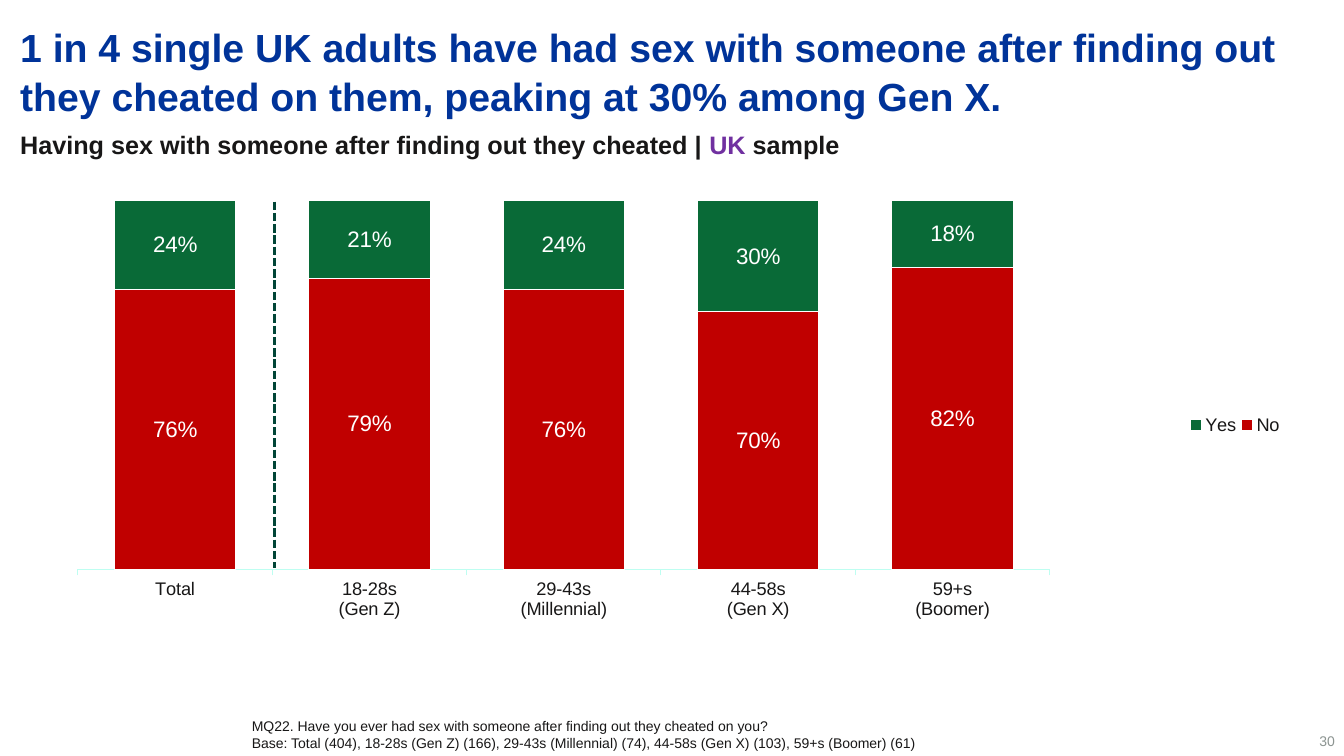
"""Build the slide on single UK adults and cheating, with a stacked chart by age group."""
import pptx
import pptx.chart.data
import pptx.dml.color
import pptx.enum.chart
import pptx.enum.dml
import pptx.enum.shapes
import pptx.enum.text
import pptx.oxml
import pptx.oxml.ns
import pptx.util
from pptx.util import Inches, Pt

TITLE = ("1 in 4 single UK adults have had sex with someone after finding out "
         "they cheated on them, peaking at 30% among Gen X.")
HEAD = [("Having sex with someone after finding out they cheated | ", "181717"),
        ("UK", "7030A0"), (" sample", "181717")]
NOTES = ["MQ22. Have you ever had sex with someone after finding out they cheated on you?",
         "Base: Total (404), 18-28s (Gen Z) (166), 29-43s (Millennial) (74), "
         "44-58s (Gen X) (103), 59+s (Boomer) (61)"]
PAGE = "30"
GROUPS = ["Total", "18-28s\n(Gen Z)", "29-43s\n(Millennial)", "44-58s\n(Gen X)", "59+s\n(Boomer)"]
SERIES = [("No", "C00000", [0.76, 0.79, 0.76, 0.7, 0.82]),
          ("Yes", "096A37", [0.24, 0.21, 0.24, 0.3, 0.18])]
INK, BLUE, GREEN, GREY, WHITE, MINT = "181717", "003399", "014537", "8C9491", "FFFFFF", "BEFEF1"
PLOT = (0.03, 0.08, 0.78, 0.7)
PLOT = (0.026, 0.075, 0.776, 0.698)
KEY = (0.91, 0.47, 0.08, 0.06)
ALIGN = pptx.enum.text.PP_ALIGN
ANCHOR = pptx.enum.text.MSO_ANCHOR


def paint(part, color):
    """Set the colour of a font or a fill."""
    if hasattr(part, "solid"):
        part.solid()
        part.fore_color.rgb = pptx.dml.color.RGBColor.from_string(color)
    else:
        part.color.rgb = pptx.dml.color.RGBColor.from_string(color)


def style(font, size, color, bold=False):
    """Set face, size, colour and weight of a font."""
    font.name, font.size, font.bold = "Arial", Pt(size), bold
    paint(font, color)


def frame(shape, pad=0.0, anchor=ANCHOR.TOP):
    """Set margins, wrap and anchor of a shape's text."""
    text = shape.text_frame
    text.word_wrap, text.vertical_anchor = True, anchor
    text.auto_size = pptx.enum.text.MSO_AUTO_SIZE.NONE
    text.margin_left = text.margin_right = Inches(2 * pad)
    text.margin_top = text.margin_bottom = Inches(pad)
    return text


def box(slide, x, y, w, h, pad=0.0, anchor=ANCHOR.TOP):
    """Add a text box and return its text frame."""
    return frame(slide.shapes.add_textbox(Inches(x), Inches(y), Inches(w), Inches(h)), pad, anchor)


def place(node, spot, index, inner=False):
    """Give a chart part a fixed layout."""
    for old in node.findall(pptx.oxml.ns.qn("c:layout")):
        node.remove(old)
    target = '<c:layoutTarget val="inner"/>' if inner else ""
    modes = "".join(f'<c:{k}Mode val="edge"/>' for k in "xy")
    sizes = "".join(f'<c:{k} val="{v}"/>' for k, v in zip("xywh", spot))
    node.insert(index, pptx.oxml.parse_xml(
        f'<c:layout {pptx.oxml.ns.nsdecls("c")}><c:manualLayout>{target}{modes}{sizes}'
        "</c:manualLayout></c:layout>"))


def draw_chart(slide):
    """Add the stacked chart."""
    data = pptx.chart.data.CategoryChartData(number_format="0%")
    data.categories = GROUPS
    for name, _, values in SERIES:
        data.add_series(name, values)
    enum = pptx.enum.chart
    chart = slide.shapes.add_chart(
        enum.XL_CHART_TYPE.COLUMN_STACKED_100, Inches(0.45), Inches(1.6),
        Inches(12.42), Inches(5.24), data).chart
    style(chart.font, 10, GREEN)
    chart.has_title = False
    plot = chart.plots[0]
    plot.gap_width, plot.overlap, plot.vary_by_categories = 60, 100, False
    for bars, (_, color, _) in zip(plot.series, SERIES):
        paint(bars.format.fill, color)
        line = bars.format.line
        line.width = Pt(0.75)
        paint(line, WHITE)
        labels = bars.data_labels
        labels.show_value = True
        labels.number_format, labels.number_format_is_linked = "0%", False
        labels.position = enum.XL_LABEL_POSITION.CENTER
        style(labels.font, 16, WHITE)
    axis = chart.category_axis
    axis.major_tick_mark = enum.XL_TICK_MARK.OUTSIDE
    style(axis.tick_labels.font, 13, INK)
    axis.format.line.width = Pt(0.75)
    paint(axis.format.line, MINT)
    scale = chart.value_axis
    scale.minimum_scale, scale.maximum_scale, scale.major_unit = 0, 1, 0.2
    scale.has_major_gridlines = scale.visible = False
    chart.has_legend = True
    legend = chart.legend
    legend.position = enum.XL_LEGEND_POSITION.RIGHT
    legend.include_in_layout = False
    style(legend.font, 13, INK)
    for tag, spot, index, inner in [("plotArea", PLOT, 0, True), ("legend", KEY, 1, False)]:
        place(chart.element.find(".//" + pptx.oxml.ns.qn("c:" + tag)), spot, index, inner)


def draw_line(slide):
    """Add the dashed line between the total and the age groups."""
    rule = slide.shapes.add_connector(
        pptx.enum.shapes.MSO_CONNECTOR.STRAIGHT, Inches(2.72), Inches(2), Inches(2.72), Inches(5.64))
    rule.line.width = Pt(2)
    rule.line.dash_style = pptx.enum.dml.MSO_LINE.SQUARE_DOT
    paint(rule.line, GREEN)
    rule.element.spPr.append(pptx.oxml.parse_xml(f'<a:effectLst {pptx.oxml.ns.nsdecls("a")}/>'))


def main():
    """Build and save the slide."""
    deck = pptx.Presentation()
    deck.slide_width, deck.slide_height = Inches(13.33), Inches(7.5)
    slide = deck.slides.add_slide(deck.slide_layouts[5])
    title = slide.shapes.title
    title.left, title.top, title.width, title.height = map(Inches, (0.2, 0.21, 12.86, 1))
    text = frame(title)
    text.text = TITLE
    para = text.paragraphs[0]
    para.alignment, para.line_spacing = ALIGN.LEFT, 1.04
    style(para.font, 28, BLUE, True)
    draw_chart(slide)
    para = box(slide, 0.2, 1.28, 12.57, 0.37).paragraphs[0]
    for part, color in HEAD:
        run = para.add_run()
        run.text = part
        style(run.font, 18, color, True)
    text = box(slide, 2.4, 7.07, 10.47, 0.44, 0.05)
    text.text = "\n".join(NOTES)
    for para in text.paragraphs:
        style(para.font, 10, INK)
    text = box(slide, 12.65, 7.19, 0.59, 0.24, 0, ANCHOR.BOTTOM)
    text.text = PAGE
    text.paragraphs[0].alignment = ALIGN.RIGHT
    style(text.paragraphs[0].font, 10, GREY)
    draw_line(slide)
    deck.save("out.pptx")


if __name__ == "__main__":
    main()
